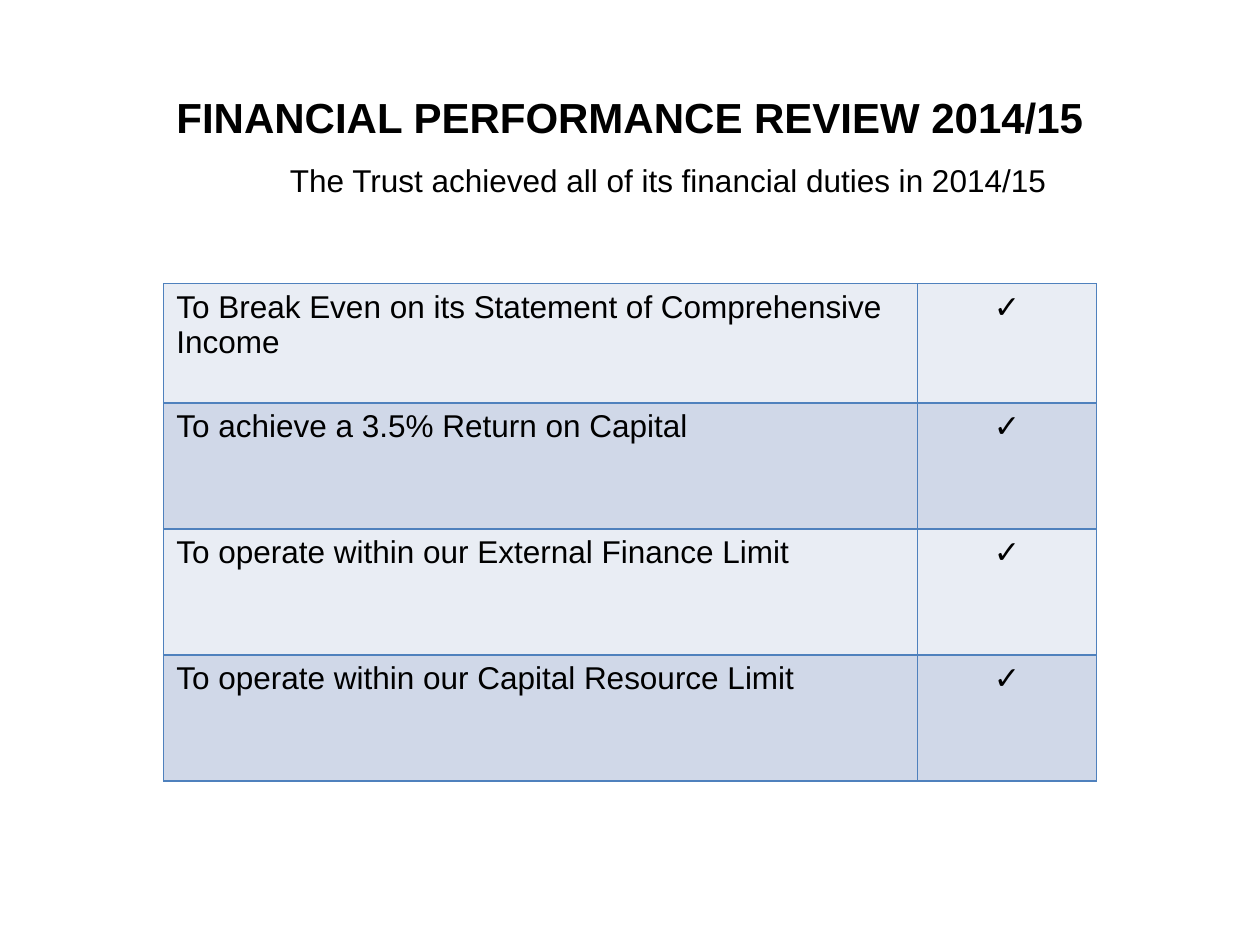
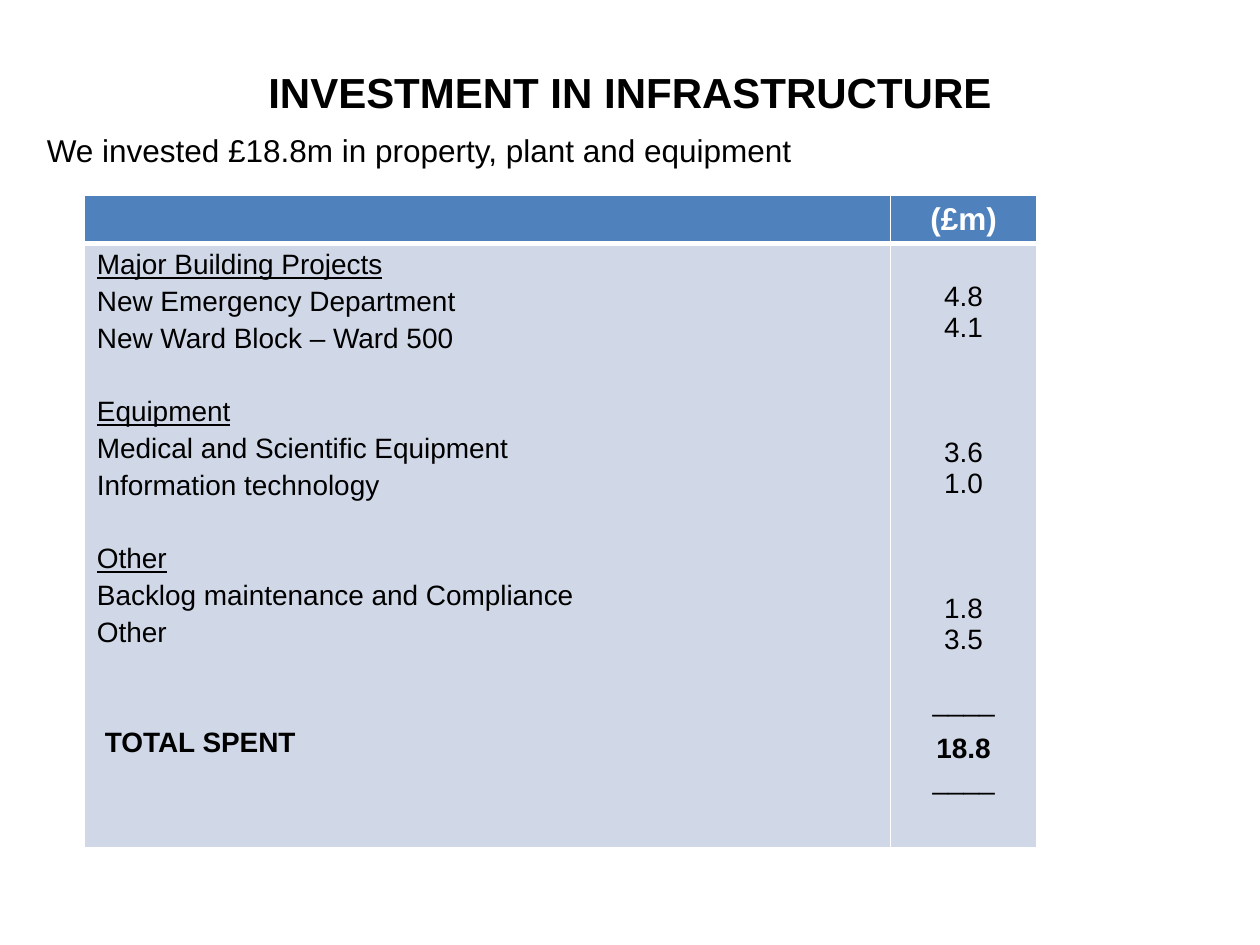
from lxml import etree
from pptx import Presentation
from pptx import util as u
from pptx.dml.color import RGBColor
from pptx.enum import text as t
from pptx.oxml.ns import qn

INK = {"text": "000000", "white": "FFFFFF", "blue": "4F81BD",
       "pale": "E9EDF4", "band": "D0D8E8"}
LEFT, MID = t.PP_ALIGN.LEFT, t.PP_ALIGN.CENTER

deck = Presentation()
deck.slide_width, deck.slide_height = u.Cm(25.4), u.Cm(19.05)


def write(frame, lines, size, align=LEFT, color="text"):
    """Fill a frame with (text, space before, style) lines; style holds "b" or "u"."""
    for i, (line, gap, style) in enumerate(lines):
        para = frame.paragraphs[0] if i == 0 else frame.add_paragraph()
        para.text = line
        para.alignment = align
        para.space_before = u.Pt(gap)
        font = para.font
        font.name, font.size = "Arial", u.Pt(size)
        font.bold, font.underline = "b" in style, "u" in style
        font.color.rgb = RGBColor.from_string(INK[color])


def paint(cell, fill, line, thick=""):
    """Rule all four sides, three points on the thick one, then fill the cell."""
    props = cell._tc.get_or_add_tcPr()
    for side in "LRTB":
        width = u.Pt(3 if side == thick else 1)
        rule = etree.SubElement(props, qn("a:ln" + side), w=str(width))
        solid = etree.SubElement(rule, qn("a:solidFill"))
        etree.SubElement(solid, qn("a:srgbClr"), val=INK[line])
    cell.fill.solid()
    cell.fill.fore_color.rgb = RGBColor.from_string(INK[fill])


# Titles, lead lines and empty tables; lengths in cm
pages = [
    ("FINANCIAL PERFORMANCE REVIEW 2014/15", 3.18,
     "The Trust achieved all of its financial duties in 2014/15",
     (2.11, 3.12, 20.83), 3.48,
     (3.3, 5.72), [15.2, 3.6], [2.4, 2.54, 2.54, 2.54]),
    ("INVESTMENT IN INFRASTRUCTURE", 2.16,
     "We invested £18.8m in property, plant and equipment",
     (0.69, 2.51, 22.4), 0,
     (1.7, 3.94), [16.25, 2.95], [0.95, 12.18]),
]
grids = []
for name, tall, lead, box, inset, spot, cols, rows in pages:
    slide = deck.slides.add_slide(deck.slide_layouts[1])
    title, body = slide.shapes.title, slide.placeholders[1]
    title.left, title.top = u.Cm(1.27), u.Cm(0.76)
    title.width, title.height = u.Cm(22.86), u.Cm(tall)
    write(title.text_frame, [(name, 0, "b")], 24, MID)

    body.left, body.top, body.width = map(u.Cm, box)
    body.height = u.Cm(1.19)
    body.text_frame.auto_size = t.MSO_AUTO_SIZE.NONE
    props = body.text_frame.paragraphs[0]._p.get_or_add_pPr()
    props.set("marL", str(u.Cm(inset)))
    props.set("indent", "0")
    etree.SubElement(props, qn("a:buNone"))
    write(body.text_frame, [(lead, 0, "")], 18)

    grid = slide.shapes.add_table(
        len(rows), len(cols), *map(u.Cm, spot),
        u.Cm(sum(cols)), u.Cm(sum(rows))).table
    grid.first_row = grid.horz_banding = False
    for col, wide in zip(grid.columns, cols):
        col.width = u.Cm(wide)
    for row, high in zip(grid.rows, rows):
        row.height = u.Cm(high)
    grids.append(grid)
duties, spend = grids

# Financial duties, each ticked off
goals = ["To Break Even on its Statement of Comprehensive Income",
         "To achieve a 3.5% Return on Capital",
         "To operate within our External Finance Limit",
         "To operate within our Capital Resource Limit"]
for i, goal in enumerate(goals):
    for j, (word, style, align) in enumerate([(goal, "", LEFT), ("✓", "b", MID)]):
        cell = duties.cell(i, j)
        paint(cell, ("pale", "band")[i % 2], "blue")
        write(cell.text_frame, [(word, 0, style)], 18, align)

# Spending by group; LINE is the height of one 16 pt line, GAP the space between
LINE, GAP = 17.9, 3.2
groups = [
    ("Major Building Projects",
     [("New Emergency Department", "4.8"), ("New Ward Block – Ward 500", "4.1")]),
    ("Equipment",
     [("Medical and Scientific Equipment", "3.6"), ("Information technology", "1.0")]),
    ("Other",
     [("Backlog maintenance and Compliance", "1.8"), ("Other", "3.5")]),
]
names, sums = [], []
for head, items in groups:
    names.append((head, LINE + 2 * GAP if names else 0, "u"))
    for k, (item, cost) in enumerate(items):
        names.append((item, GAP, ""))
        sums.append((cost, 3 * LINE if sums and k == 0 else 0, ""))
names.append(("TOTAL SPENT", 2 * LINE + 3 * GAP, "b"))
sums += [("____", LINE, ""), ("18.8", LINE / 2, "b"), ("____", 0, "")]

for j, (head, lines, align) in enumerate([("", names, LEFT), ("(£m)", sums, MID)]):
    top, cell = spend.cell(0, j), spend.cell(1, j)
    paint(top, "blue", "white", "B")
    write(top.text_frame, [(head, 0, "b")], 18, MID, "white")
    paint(cell, "band", "white", "T")
    write(cell.text_frame, lines, 16, align)
spend.cell(1, 1).margin_top = u.Pt(3.6 + LINE)
total = spend.cell(1, 0).text_frame.paragraphs[-1]
total._p.get_or_add_pPr().set("marL", str(u.Cm(0.16)))

deck.save("out.pptx")
